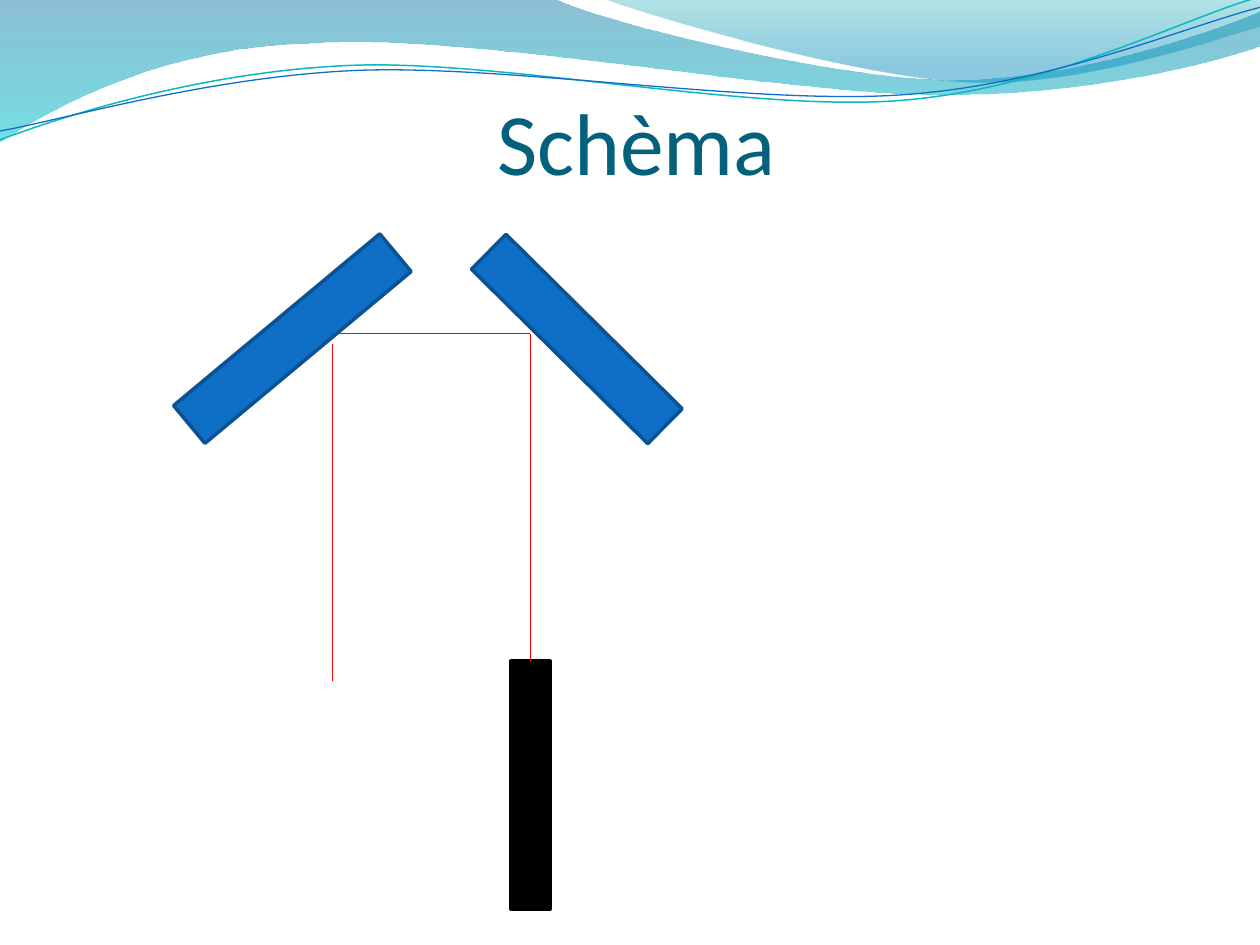
from lxml.etree import SubElement
from pptx import Presentation
from pptx.dml.color import RGBColor
from pptx.enum.shapes import MSO_CONNECTOR, MSO_SHAPE
from pptx.enum.text import MSO_ANCHOR, PP_ALIGN
from pptx.oxml.ns import qn
from pptx.util import Cm, Pt

BLUE = RGBColor(0x0F, 0x6F, 0xC6)
DARK_BLUE = RGBColor(0x0B, 0x52, 0x92)
TEAL = RGBColor(0x0A, 0xB8, 0xBF)
TITLE_COLOR = RGBColor(0x04, 0x61, 0x7B)
BLACK = RGBColor(0, 0, 0)
RED = RGBColor(0xFF, 0, 0)

# Wave paths in cm: two numbers are a line to a point, six are a Bézier curve.
# Gradient stops are (position, colour, opacity in percent).
BANDS = [
    ([(0, 0), (11.18, -0.03),
      (12.09, 0.43, 16.87, 1.6, 19.25, 1.6),
      (21.67, 1.6, 24.33, 0.66, 25.4, 0.23), (25.43, 0.91),
      (24.97, 1.12, 22.1, 1.93, 18.95, 1.91),
      (15.8, 1.91, 9.7, 0.71, 6.53, 0.86),
      (3.28, 0.91, 1.17, 2.11, -0.03, 2.87)],
     [(0, RGBColor(0x00, 0x74, 0xA1), 45), (1, RGBColor(0x00, 0xC6, 0xCF), 55)]),
    ([(12.17, -0.03),
      (12.93, 0.28, 17.32, 1.57, 19.53, 1.65),
      (21.74, 1.75, 24.41, 0.81, 25.4, 0.53), (25.4, 0)],
     [(0, RGBColor(0x00, 0xA1, 0xA9), 30), (0.8, RGBColor(0x00, 0x8B, 0xBF), 45)]),
]
STRANDS = [
    ([(0, 2.82),
      (1.22, 2.36, 4.01, 1.45, 7.04, 1.32),
      (10.03, 1.19, 15.06, 2.26, 18.11, 2.03),
      (21.16, 1.8, 23.83, 0.38, 25.35, -0.05)], TEAL, 0.85),
    ([(0, 2.64),
      (1.19, 2.44, 4.17, 1.55, 7.19, 1.42),
      (10.24, 1.3, 15.22, 2.13, 18.21, 1.91),
      (21.23, 1.7, 23.9, 0.53, 25.4, 0.15)], BLUE, 0.75),
]


def add_path(slide, left, top, path, close):
    """Draw the end points as a freeform, then bend its curved segments."""
    ends = [(left + Cm(seg[-2]), top + Cm(seg[-1])) for seg in path]
    builder = slide.shapes.build_freeform(*ends[0])
    builder.add_line_segments(ends[1:], close=close)
    sp = builder.convert_to_shape()
    sp.shadow.inherit = False
    segments = list(sp._element.spPr.iter(qn("a:lnTo")))
    for node, seg in zip(segments, path[1:]):
        if len(seg) == 6:
            node.tag = qn("a:cubicBezTo")
            for i, (x, y) in enumerate([seg[:2], seg[2:4]]):
                pt = SubElement(node, qn("a:pt"))
                pt.set("x", str(left + Cm(x) - sp.left))
                pt.set("y", str(top + Cm(y) - sp.top))
                node.insert(i, pt)
    return sp


def set_line(sp, color, width):
    sp.line.color.rgb = color
    sp.line.width = Pt(width)


def add_waves(slide, left, top):
    # Translucent bands
    for path, stops in BANDS:
        sp = add_path(slide, left, top, path, True)
        sp.line.fill.background()
        sp.fill.gradient()
        sp.fill.gradient_angle = 270
        for stop, (position, color, _) in zip(sp.fill.gradient_stops, stops):
            stop.position = position
            stop.color.rgb = color
        colors = sp._element.spPr.iter(qn("a:srgbClr"))
        for clr, (_, _, opacity) in zip(colors, stops):
            SubElement(clr, qn("a:alpha")).set("val", str(opacity * 1000))
    # Thin strands
    for path, color, width in STRANDS:
        sp = add_path(slide, left, top, path, False)
        sp.fill.background()
        set_line(sp, color, width)


def add_title(slide, left, top, width, height, text):
    tf = slide.shapes.add_textbox(left, top, width, height).text_frame
    frame = {"word_wrap": True, "vertical_anchor": MSO_ANCHOR.BOTTOM,
             "margin_left": 0, "margin_right": 0,
             "margin_top": Cm(0.13), "margin_bottom": 0}
    for name, value in frame.items():
        setattr(tf, name, value)
    p = tf.paragraphs[0]
    p.alignment = PP_ALIGN.CENTER
    r = p.add_run()
    r.text = text
    for name, value in {"name": "Calibri", "size": Pt(50)}.items():
        setattr(r.font, name, value)
    r.font.color.rgb = TITLE_COLOR


def add_diagram(slide, left, top):
    # Two tilted mirrors and the upright laser
    blocks = [
        (-0.01, 0.01, 5.41, 0.99, 320.2, BLUE, DARK_BLUE),
        (5.93, 0.02, 5, 0.99, 44.7, BLUE, DARK_BLUE),
        (7.1, 7.01, 0.79, 5, 0, BLACK, BLACK),
    ]
    for x, y, w, h, rotation, fill, line in blocks:
        sp = slide.shapes.add_shape(MSO_SHAPE.RECTANGLE, left + Cm(x), top + Cm(y),
                                    Cm(w), Cm(h))
        sp.shadow.inherit = False
        sp.rotation = rotation
        sp.fill.solid()
        sp.fill.fore_color.rgb = fill
        set_line(sp, line, 2)

    # Beam: up from the laser, across, and back down
    x_out, x_back, y_across = 7.49, 3.5, 0.41
    beams = [
        (x_out, 7.02, x_out, y_across),
        (x_out, y_across, x_back, y_across),
        (x_back, 0.61, x_back, 7.4),
    ]
    for x1, y1, x2, y2 in beams:
        beam = slide.shapes.add_connector(MSO_CONNECTOR.STRAIGHT,
                                          left + Cm(x1), top + Cm(y1),
                                          left + Cm(x2), top + Cm(y2))
        set_line(beam, RED, 0.75)
        SubElement(beam._element.spPr, qn("a:effectLst"))


def main():
    prs = Presentation()
    prs.slide_width, prs.slide_height = Cm(25.4), Cm(19.05)
    slide = prs.slides.add_slide(prs.slide_layouts[6])
    add_waves(slide, Cm(0), Cm(0))
    add_title(slide, Cm(1.3), Cm(0.72), Cm(23.06), Cm(3.18), "Schèma")
    add_diagram(slide, Cm(3.2), Cm(6.32))
    prs.save("out.pptx")


if __name__ == "__main__":
    main()
